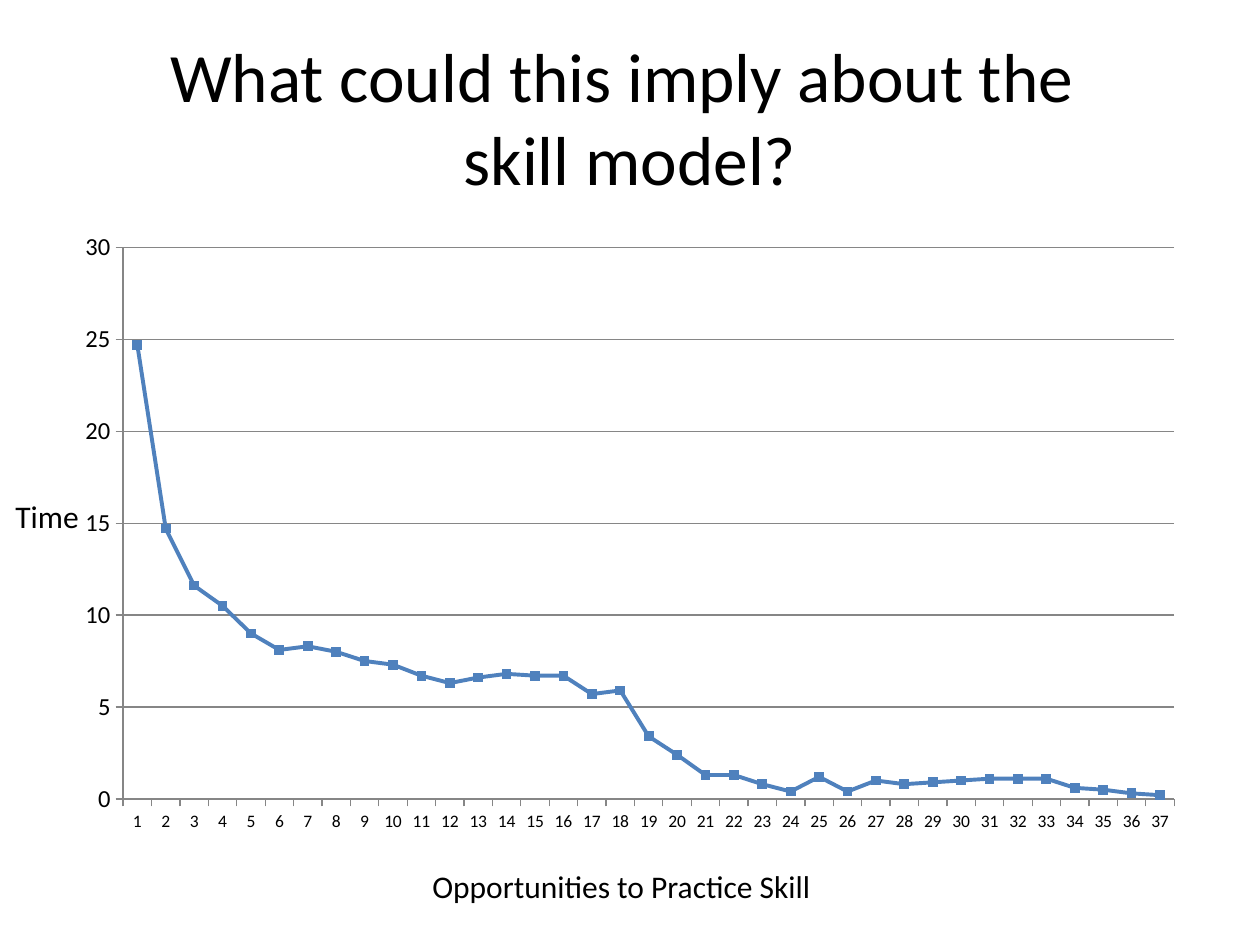
from lxml.etree import SubElement
from pptx import Presentation
from pptx.chart.data import CategoryChartData
from pptx.dml.color import RGBColor
from pptx.enum.chart import XL_CHART_TYPE, XL_MARKER_STYLE, XL_TICK_MARK
from pptx.enum.text import MSO_ANCHOR, PP_ALIGN
from pptx.oxml.ns import qn
from pptx.util import Pt

PX = 914400 // 126
FONT = "Calibri"
BLACK = RGBColor(0x00, 0x00, 0x00)
BLUE = RGBColor(0x4F, 0x81, 0xBD)
GRAY = RGBColor(0x86, 0x86, 0x86)

TIMES = [24.7, 14.7, 11.6, 10.5, 9, 8.1, 8.3, 8, 7.5, 7.3, 6.7, 6.3, 6.6,
         6.8, 6.7, 6.7, 5.7, 5.9, 3.4, 2.4, 1.3, 1.3, 0.8, 0.4, 1.2, 0.4,
         1, 0.8, 0.9, 1, 1.1, 1.1, 1.1, 0.6, 0.5, 0.3, 0.2]


def box(*lengths):
    return [n * PX for n in lengths]


def set_font(font, size):
    font.name = FONT
    font.size = Pt(size)
    font.color.rgb = BLACK


def add_text(s, place, lines, size, align=PP_ALIGN.LEFT, anchor=MSO_ANCHOR.TOP):
    tf = s.shapes.add_textbox(*box(*place)).text_frame
    tf.word_wrap = True
    tf.vertical_anchor = anchor
    p = tf.paragraphs[0]
    p.alignment = align
    for i, line in enumerate(lines):
        if i:
            p.add_line_break()
        r = p.add_run()
        r.text = line
        set_font(r.font, size)


def style_axis(axis, size):
    axis.major_tick_mark = XL_TICK_MARK.OUTSIDE
    axis.minor_tick_mark = XL_TICK_MARK.NONE
    axis.format.line.color.rgb = GRAY
    axis.format.line.width = Pt(0.75)
    set_font(axis.tick_labels.font, size)


def set_plot_layout(chart, **fractions):
    """Fix the inner plot area as fractions of the chart."""
    area = chart.element.find(".//" + qn("c:plotArea"))
    layout = area.find(qn("c:layout"))
    if layout is None:
        layout = SubElement(area, qn("c:layout"))
        area.insert(0, layout)
    manual = SubElement(layout, qn("c:manualLayout"))
    settings = {"layoutTarget": "inner", "xMode": "edge", "yMode": "edge"}
    for tag, value in {**settings, **fractions}.items():
        SubElement(manual, qn("c:" + tag)).set("val", str(value))


def add_learning_curve(s, place):
    data = CategoryChartData()
    data.categories = [str(n + 1) for n in range(len(TIMES))]
    data.add_series("Series 1", TIMES)
    chart = s.shapes.add_chart(XL_CHART_TYPE.LINE_MARKERS, *box(*place), data).chart
    chart.has_legend = False
    chart.has_title = False
    set_font(chart.font, 10)
    style_axis(chart.category_axis, 10)

    axis = chart.value_axis
    style_axis(axis, 14)
    axis.minimum_scale, axis.maximum_scale, axis.major_unit = 0, 30, 5
    axis.tick_labels.number_format = "General"
    axis.tick_labels.number_format_is_linked = False
    axis.has_major_gridlines = True
    axis.major_gridlines.format.line.color.rgb = GRAY
    axis.major_gridlines.format.line.width = Pt(0.75)

    chart.plots[0].vary_by_categories = False
    series = chart.plots[0].series[0]
    series.smooth = False
    series.format.line.color.rgb = BLUE
    series.format.line.width = Pt(2.25)
    marker = series.marker
    marker.style = XL_MARKER_STYLE.SQUARE
    marker.size = 5
    marker.format.fill.solid()
    marker.format.fill.fore_color.rgb = BLUE
    marker.format.line.color.rgb = BLUE
    set_plot_layout(chart, x=0.053, y=0.044, w=0.927, h=0.884)


def main():
    prs = Presentation()
    prs.slide_width, prs.slide_height = box(1260, 945)
    s = prs.slides.add_slide(prs.slide_layouts[6])
    add_text(s, (63, 38, 1134, 157), ["What could this imply about the ", "skill model?"],
             39.6, PP_ALIGN.CENTER, MSO_ANCHOR.MIDDLE)
    add_learning_curve(s, (63, 220, 1134, 624))
    add_text(s, (3, 491, 126, 50), ["Time"], 18)
    add_text(s, (420, 861, 683, 50), ["Opportunities to Practice Skill"], 18)
    prs.save("out.pptx")


if __name__ == "__main__":
    main()
